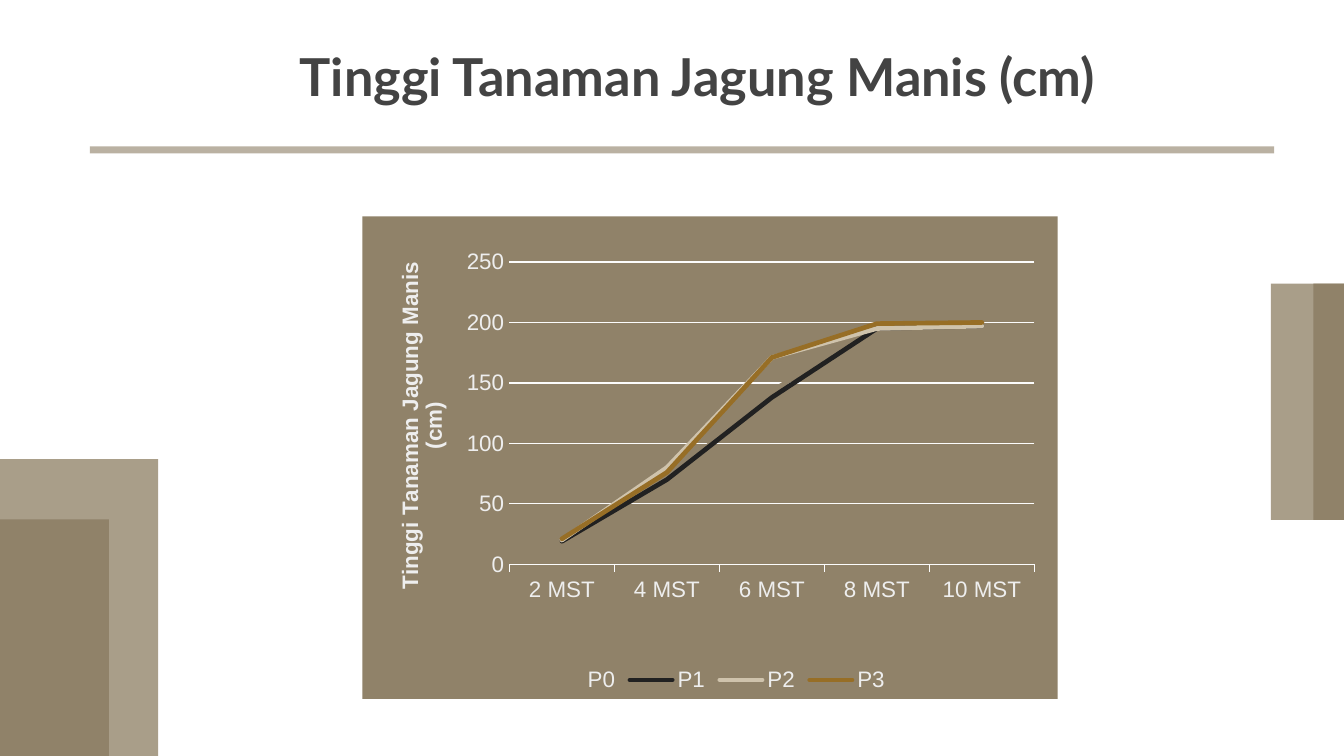
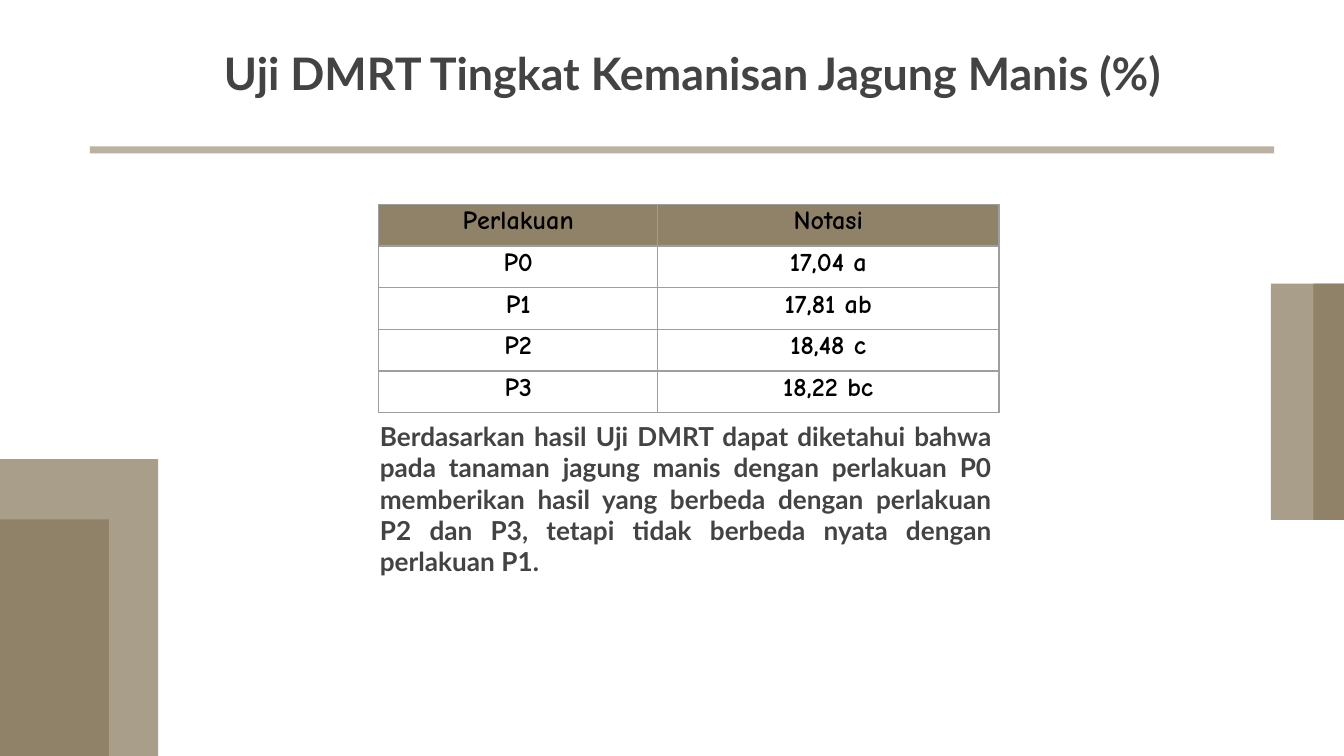
from dataclasses import dataclass
from typing import Any

from lxml.etree import SubElement
from pptx import Presentation
from pptx.chart.data import CategoryChartData
from pptx.dml.color import RGBColor
from pptx.enum.chart import XL_CHART_TYPE, XL_LEGEND_POSITION, XL_TICK_MARK
from pptx.enum.shapes import MSO_SHAPE
from pptx.enum.text import MSO_ANCHOR, MSO_AUTO_SIZE, PP_ALIGN
from pptx.oxml import parse_xml
from pptx.oxml.ns import nsdecls, qn
from pptx.slide import Slide
from pptx.util import Cm, Pt

OLIVE = RGBColor(0x90, 0x82, 0x69)
SAND = RGBColor(0xA9, 0x9E, 0x89)
INK = RGBColor(0x43, 0x43, 0x43)
BLACK = RGBColor(0, 0, 0)
CHARCOAL = RGBColor(0x21, 0x21, 0x21)
CREAM = RGBColor(0xCF, 0xC3, 0xAC)
BRONZE = RGBColor(0x97, 0x6E, 0x26)
AXIS_TEXT = RGBColor(0xEE, 0xEE, 0xEE)
GRID = RGBColor(0xFC, 0xFC, 0xFC)
BORDER = RGBColor(0x9E, 0x9E, 0x9E)

CHART_FONT = {"name": "Arial", "size": Pt(12), "bold": False}
CELL_FONT = {"name": "Comic Neue", "size": Pt(14), "bold": True}
BODY_FONT = {"name": "Lato", "size": Pt(14), "bold": True}


@dataclass(frozen=True)
class Box:
    """A place on the slide, in centimetres."""
    left: float
    top: float
    width: float
    height: float

    def lengths(self) -> tuple[Cm, Cm, Cm, Cm]:
        return Cm(self.left), Cm(self.top), Cm(self.width), Cm(self.height)


@dataclass(frozen=True)
class Band:
    box: Box
    color: RGBColor
    opacity: int = 100


@dataclass(frozen=True)
class Treatment:
    name: str
    heights: tuple[int, ...]
    color: RGBColor


BANDS = (
    Band(Box(1.7, 2.77, 22.38, 0.13), OLIVE, 62),
    Band(Box(0, 8.68, 2.99, 5.61), SAND),
    Band(Box(0, 9.82, 2.06, 4.47), OLIVE),
    Band(Box(24.02, 5.36, 1.38, 4.47), SAND),
    Band(Box(24.82, 5.36, 0.58, 4.47), OLIVE),
)
CHART_PANEL = Band(Box(6.85, 4.09, 13.14, 9.12), OLIVE)

WEEKS = ("2 MST", "4 MST", "6 MST", "8 MST", "10 MST")
TREATMENTS = (
    Treatment("P0", (20, 69, 143, 198, 200), OLIVE),
    Treatment("P1", (19, 70, 138, 195, 197), CHARCOAL),
    Treatment("P2", (20, 80, 171, 195, 197), CREAM),
    Treatment("P3", (21, 76, 171, 199, 200), BRONZE),
)
PLOT_LAYOUT = {"x": 0.21, "y": 0.05, "w": 0.75, "h": 0.66}

SWEETNESS = (
    ("Perlakuan", "Notasi"),
    ("P0", "17,04 a"),
    ("P1", "17,81 ab"),
    ("P2", "18,48 c"),
    ("P3", "18,22 bc"),
)
COLUMN_WIDTHS = (Cm(5.27), Cm(6.45))
CONCLUSION = (
    "Berdasarkan hasil Uji DMRT dapat diketahui bahwa pada tanaman jagung manis "
    "dengan perlakuan P0 memberikan hasil yang berbeda dengan perlakuan P2 dan P3, "
    "tetapi tidak berbeda nyata dengan perlakuan P1."
)


def apply(target: Any, values: dict[str, Any]) -> None:
    for attribute, value in values.items():
        setattr(target, attribute, value)


def style_font(font: Any, values: dict[str, Any], color: RGBColor) -> None:
    apply(font, values)
    font.color.rgb = color


def style_line(line: Any, color: RGBColor, width: float) -> None:
    line.color.rgb = color
    line.width = Pt(width)


def draw_band(slide: Slide, band: Band) -> None:
    rectangle = slide.shapes.add_shape(MSO_SHAPE.RECTANGLE, *band.box.lengths())
    rectangle.shadow.inherit = False
    rectangle.fill.solid()
    rectangle.fill.fore_color.rgb = band.color
    rectangle.line.fill.background()
    if band.opacity < 100:
        color = rectangle._element.spPr.find(qn("a:solidFill"))[0]
        SubElement(color, qn("a:alpha"), val=str(band.opacity * 1000))


def write_text(frame: Any, text: str, align: PP_ALIGN,
               font: dict[str, Any], color: RGBColor) -> None:
    paragraph = frame.paragraphs[0]
    paragraph.alignment = align
    run = paragraph.add_run()
    run.text = text
    style_font(run.font, font, color)


def add_titled_slide(deck: Any, title: str, box: Box, size: int) -> Slide:
    """Add a slide with its title and the shared rule and side bands."""
    slide = deck.slides.add_slide(deck.slide_layouts.get_by_name("Title Only"))
    heading = slide.shapes.title
    apply(heading, dict(zip(("left", "top", "width", "height"), box.lengths())))
    apply(heading.text_frame, {
        "word_wrap": True,
        "auto_size": MSO_AUTO_SIZE.NONE,
        "vertical_anchor": MSO_ANCHOR.MIDDLE,
    })
    write_text(heading.text_frame, title, PP_ALIGN.CENTER,
               BODY_FONT | {"size": Pt(size)}, INK)
    for band in BANDS:
        draw_band(slide, band)
    return slide


def fix_plot_area(chart: Any) -> None:
    """Place the inner plot by fractions and clear the chart backgrounds."""
    clear = (f"<c:spPr {nsdecls('c', 'a')}><a:noFill/>"
             "<a:ln><a:noFill/></a:ln></c:spPr>")
    chart_part = chart._chartSpace.find(qn("c:chart"))
    chart_part.addnext(parse_xml(clear))
    plot_area = chart_part.find(qn("c:plotArea"))
    plot_area.append(parse_xml(clear))
    for old_layout in plot_area.findall(qn("c:layout")):
        plot_area.remove(old_layout)
    layout = parse_xml(f"<c:layout {nsdecls('c')}/>")
    plot_area.insert(0, layout)
    manual = SubElement(layout, qn("c:manualLayout"))
    settings = {"layoutTarget": "inner", "xMode": "edge", "yMode": "edge"}
    for tag, value in (settings | PLOT_LAYOUT).items():
        SubElement(manual, qn(f"c:{tag}"), val=str(value))


def add_height_chart(slide: Slide, box: Box) -> None:
    growth = CategoryChartData()
    growth.categories = WEEKS
    for treatment in TREATMENTS:
        growth.add_series(treatment.name, treatment.heights)
    chart = slide.shapes.add_chart(
        XL_CHART_TYPE.LINE, *box.lengths(), growth).chart
    style_font(chart.font, CHART_FONT, AXIS_TEXT)
    apply(chart, {"has_title": False, "has_legend": True})
    apply(chart.legend, {"position": XL_LEGEND_POSITION.BOTTOM,
                         "include_in_layout": False})
    style_font(chart.legend.font, CHART_FONT, AXIS_TEXT)

    plot = chart.plots[0]
    plot.vary_by_categories = False
    for series, treatment in zip(plot.series, TREATMENTS):
        series.smooth = False
        style_line(series.format.line, treatment.color, 2.5)
        series.format.line._ln.set("cap", "rnd")

    weeks, heights = chart.category_axis, chart.value_axis
    for axis in (weeks, heights):
        style_font(axis.tick_labels.font, CHART_FONT, AXIS_TEXT)
    weeks.major_tick_mark = XL_TICK_MARK.OUTSIDE
    style_line(weeks.format.line, GRID, 0.75)
    apply(heights, {
        "minimum_scale": 0,
        "maximum_scale": 250,
        "major_unit": 50,
        "major_tick_mark": XL_TICK_MARK.NONE,
        "has_major_gridlines": True,
    })
    heights.format.line.fill.background()
    style_line(heights.major_gridlines.format.line, GRID, 0.75)
    write_text(heights.axis_title.text_frame, "Tinggi Tanaman Jagung Manis (cm)",
               PP_ALIGN.CENTER, CHART_FONT | {"bold": True}, AXIS_TEXT)
    fix_plot_area(chart)


def add_borders(cell: Any) -> None:
    properties = cell._tc.get_or_add_tcPr()
    for index, side in enumerate(("lnL", "lnR", "lnT", "lnB")):
        properties.insert(index, parse_xml(
            f'<a:{side} {nsdecls("a")} w="{Pt(0.75)}"><a:solidFill>'
            f'<a:srgbClr val="{BORDER}"/></a:solidFill></a:{side}>'))


def add_sweetness_table(slide: Slide, box: Box) -> None:
    table = slide.shapes.add_table(
        len(SWEETNESS), len(COLUMN_WIDTHS), *box.lengths()).table
    for column, width in zip(table.columns, COLUMN_WIDTHS):
        column.width = width
    for row, entries in enumerate(SWEETNESS):
        for column, entry in enumerate(entries):
            cell = table.cell(row, column)
            apply(cell, {"margin_left": Cm(0.18), "margin_right": Cm(0.18),
                         "margin_top": 0, "margin_bottom": 0,
                         "vertical_anchor": MSO_ANCHOR.TOP})
            write_text(cell.text_frame, entry, PP_ALIGN.CENTER, CELL_FONT, BLACK)
            cell.text_frame.paragraphs[0].line_spacing = 1.07
            if row == 0:
                cell.fill.solid()
                cell.fill.fore_color.rgb = OLIVE
            else:
                cell.fill.background()
            add_borders(cell)


def add_conclusion(slide: Slide, box: Box) -> None:
    frame = slide.shapes.add_textbox(*box.lengths()).text_frame
    apply(frame, {"word_wrap": True, "auto_size": MSO_AUTO_SIZE.SHAPE_TO_FIT_TEXT})
    write_text(frame, CONCLUSION, PP_ALIGN.JUSTIFY, BODY_FONT, INK)


def main() -> None:
    deck = Presentation()
    apply(deck, {"slide_width": Cm(25.4), "slide_height": Cm(14.29)})

    height_slide = add_titled_slide(
        deck, "Tinggi Tanaman Jagung Manis (cm)", Box(4.06, 0.76, 18.24, 1.35), 28)
    draw_band(height_slide, CHART_PANEL)
    add_height_chart(height_slide, Box(6.85, 4.52, 13.23, 8.66))

    sweetness_slide = add_titled_slide(
        deck, "Uji DMRT Tingkat Kemanisan Jagung Manis (%)",
        Box(3, 0.79, 20.17, 1.17), 24)
    add_sweetness_table(sweetness_slide, Box(7.16, 3.86, 11.72, 3.94))
    add_conclusion(sweetness_slide, Box(6.93, 7.82, 12.07, 3.25))

    deck.save("out.pptx")


if __name__ == "__main__":
    main()
